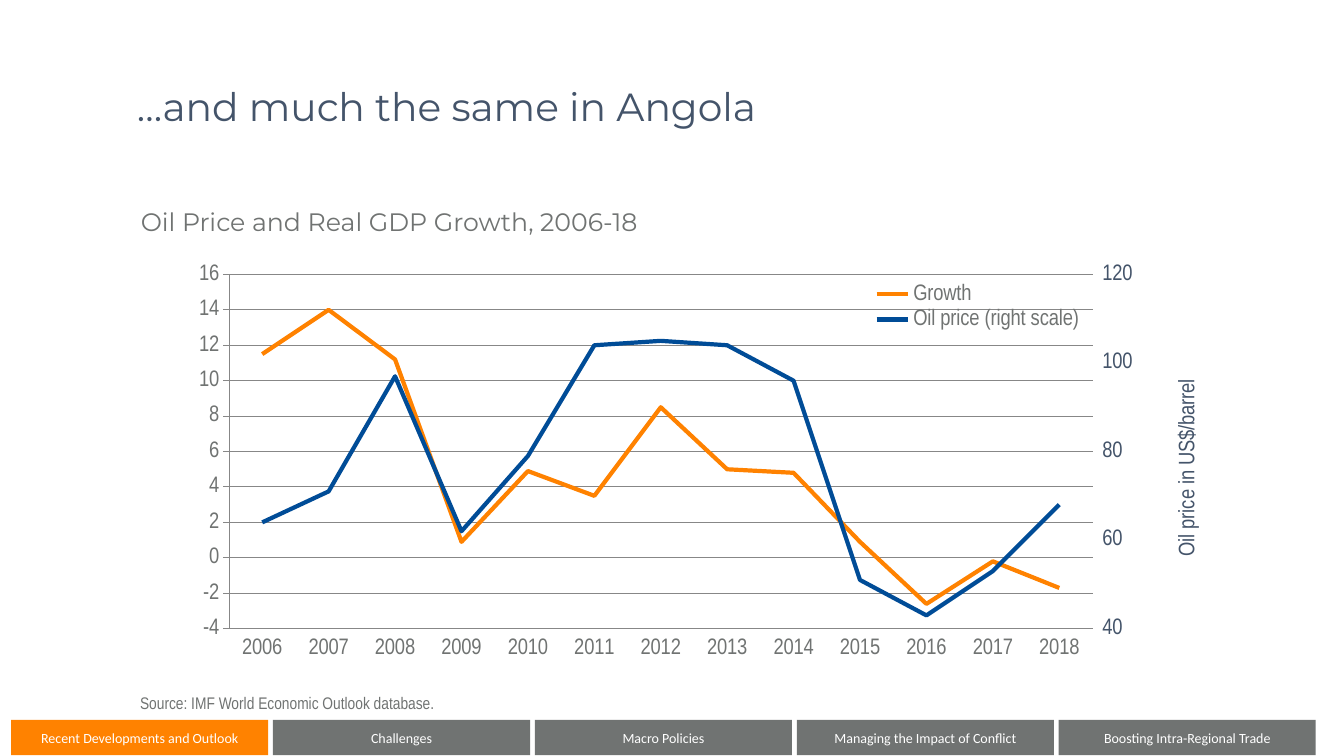
from copy import deepcopy

from lxml import etree
from pptx import Presentation
from pptx.chart.axis import ValueAxis
from pptx.chart.data import CategoryChartData
from pptx.dml.color import RGBColor
from pptx.enum import chart as charts, shapes, text
from pptx.oxml.ns import qn
from pptx.util import Cm, Pt

ORANGE = RGBColor(0xFF, 0x82, 0x00)
BLUE = RGBColor(0x00, 0x4C, 0x97)
SLATE = RGBColor(0x44, 0x54, 0x6A)
GREY = RGBColor(0x70, 0x73, 0x72)
WHITE = RGBColor(0xFF, 0xFF, 0xFF)

NARROW = "Arial Narrow"
YEARS = [str(year) for year in range(2006, 2019)]
GROWTH = [11.5, 14, 11.2, 0.9, 4.9, 3.5, 8.5, 5, 4.8, 0.9, -2.6, -0.2, -1.7]
OIL_PRICE = [64, 71, 97, 62, 79, 104, 105, 104, 96, 51, 43, 53, 68]
SECTIONS = ["Recent Developments and Outlook", "Challenges", "Macro Policies",
            "Managing the Impact of Conflict", "Boosting Intra-Regional Trade"]


def set_attributes(target, values):
    for name, value in values.items():
        setattr(target, name, value)


def format_font(font, name, size, color):
    set_attributes(font, {"name": name, "size": Pt(size), "bold": False})
    font.color.rgb = color


def add_text(slide, box, words, font, frame_format=None, line_spacing=None):
    frame = slide.shapes.add_textbox(*map(Cm, box)).text_frame
    set_attributes(frame, {"word_wrap": True, **(frame_format or {})})
    paragraph = frame.paragraphs[0]
    paragraph.line_spacing = line_spacing
    run = paragraph.add_run()
    run.text = words
    format_font(run.font, *font)


def set_layout(element, index, inner=False, **fractions):
    """Place a chart part by fractions of the chart's size."""
    for old in element.findall(qn("c:layout")):
        element.remove(old)
    layout = etree.Element(qn("c:layout"))
    manual = etree.SubElement(layout, qn("c:manualLayout"))
    if inner:
        etree.SubElement(manual, qn("c:layoutTarget"), val="inner")
    for side in "xy":
        etree.SubElement(manual, qn(f"c:{side}Mode"), val="edge")
    for side, fraction in fractions.items():
        etree.SubElement(manual, qn(f"c:{side}"), val=str(fraction))
    element.insert(index, layout)


def add_right_axis(chart):
    """Move the second series to its own line plot with a right-hand scale."""
    category_element = chart.category_axis._element
    value_element = chart.value_axis._element
    plot_area = value_element.getparent()
    left_plot = plot_area.find(qn("c:lineChart"))
    right_plot = deepcopy(left_plot)
    left_plot.remove(left_plot.findall(qn("c:ser"))[1])
    right_plot.remove(right_plot.findall(qn("c:ser"))[0])
    left_plot.addnext(right_plot)

    right_value, right_category = deepcopy(value_element), deepcopy(category_element)
    value_element.addnext(right_value)
    right_value.addnext(right_category)
    category_id, value_id = "5001", "5002"
    for axis, own, other in ((right_category, category_id, value_id),
                             (right_value, value_id, category_id)):
        axis.find(qn("c:axId")).set("val", own)
        axis.find(qn("c:crossAx")).set("val", other)
    for reference, number in zip(right_plot.findall(qn("c:axId")), (category_id, value_id)):
        reference.set("val", number)
    right_category.find(qn("c:delete")).set("val", "1")
    right_value.find(qn("c:axPos")).set("val", "r")
    right_value.find(qn("c:crosses")).set("val", "max")
    return ValueAxis(right_value)


def format_axis(axis, color, values):
    set_attributes(axis, {"has_major_gridlines": False, **values})
    axis.format.line.fill.background()
    format_font(axis.tick_labels.font, NARROW, 16, color)


def format_value_axis(axis, color, title, x, y, values):
    format_axis(axis, color, values)
    set_attributes(axis.tick_labels, {"number_format": "0", "number_format_is_linked": False})
    frame = axis.axis_title.text_frame
    frame.text = title
    format_font(frame.paragraphs[0].runs[0].font, NARROW, 16, color)
    frame._txBody.bodyPr.set("rot", "-5400000")
    set_layout(axis.axis_title._element, 1, x=x, y=y)


def add_growth_chart(slide, box):
    data = CategoryChartData()
    data.categories = YEARS
    data.add_series("Growth", GROWTH)
    data.add_series("Oil price (right scale)", OIL_PRICE)
    chart = slide.shapes.add_chart(charts.XL_CHART_TYPE.LINE, *map(Cm, box), data).chart
    chart.has_title = False
    format_font(chart.font, NARROW, 16, GREY)

    # Axes
    right_axis = add_right_axis(chart)
    tick = charts.XL_TICK_MARK
    format_axis(chart.category_axis, GREY, {
        "major_tick_mark": tick.INSIDE, "tick_label_position": charts.XL_TICK_LABEL_POSITION.LOW})
    format_value_axis(chart.value_axis, ORANGE, "Growth in Percent", 0.008, 0.3, {
        "minimum_scale": -4, "maximum_scale": 16, "major_unit": 4,
        "major_tick_mark": tick.INSIDE})
    format_value_axis(right_axis, SLATE, "Oil price in US$/barrel", 0.966, 0.27, {
        "minimum_scale": 40, "maximum_scale": 120, "major_unit": 20,
        "major_tick_mark": tick.OUTSIDE})
    plot_area = chart.value_axis._element.getparent()
    set_layout(plot_area, 0, inner=True, x=0.086, y=0.034, w=0.806, h=0.829)

    # Lines
    for plot, color in zip(chart.plots, (ORANGE, BLUE)):
        plot.vary_by_categories = False
        series = plot.series[0]
        series.smooth = False
        series.marker.style = charts.XL_MARKER_STYLE.NONE
        series.format.line.color.rgb = color
        series.format.line.width = Pt(3)

    # Legend
    chart.has_legend = True
    set_attributes(chart.legend, {
        "position": charts.XL_LEGEND_POSITION.TOP, "include_in_layout": False})
    format_font(chart.legend.font, NARROW, 16, GREY)
    set_layout(chart.legend._element, 1, x=0.685, y=0.045, w=0.2, h=0.13)


def add_section_bar(slide, box, gap, current=0):
    left, top, width, height = box
    pitch = (width + gap) / len(SECTIONS)
    for index, section in enumerate(SECTIONS):
        shape = slide.shapes.add_shape(
            shapes.MSO_SHAPE.RECTANGLE, Cm(left + index * pitch), Cm(top),
            Cm(pitch - gap), Cm(height))
        shape.shadow.inherit = False
        shape.fill.solid()
        shape.fill.fore_color.rgb = ORANGE if index == current else GREY
        shape.line.fill.background()
        set_attributes(shape.text_frame, {
            "word_wrap": False, "vertical_anchor": text.MSO_ANCHOR.MIDDLE,
            "margin_top": 0, "margin_bottom": 0})
        paragraph = shape.text_frame.paragraphs[0]
        paragraph.alignment = text.PP_ALIGN.CENTER
        run = paragraph.add_run()
        run.text = section
        format_font(run.font, "Calibri", 10, WHITE)


def main():
    presentation = Presentation()
    set_attributes(presentation, {"slide_width": Cm(33.87), "slide_height": Cm(19.05)})
    slide = presentation.slides.add_slide(presentation.slide_layouts[6])

    # Headings
    margins = ("margin_left", "margin_top", "margin_right", "margin_bottom")
    add_text(slide, (3.45, 1.37, 26.97, 2.72), "…and much the same in Angola",
             ("Montserrat", 28, SLATE),
             {"vertical_anchor": text.MSO_ANCHOR.MIDDLE, **dict.fromkeys(margins, 0)}, 0.9)
    add_text(slide, (3.3, 5.08, 23.22, 1.24), "Oil Price and Real GDP Growth, 2006-18",
             ("Montserrat", 18, GREY))

    # Chart and its source
    add_growth_chart(slide, (3.45, 6.55, 27, 10.77))
    add_text(slide, (3.28, 17.32, 8.18, 1.07), "Source: IMF World Economic Outlook database.",
             (NARROW, 12, GREY))

    # Section navigation
    add_section_bar(slide, (0.28, 18.14, 32.88, 0.89), gap=0.12)
    presentation.save("out.pptx")


if __name__ == "__main__":
    main()
